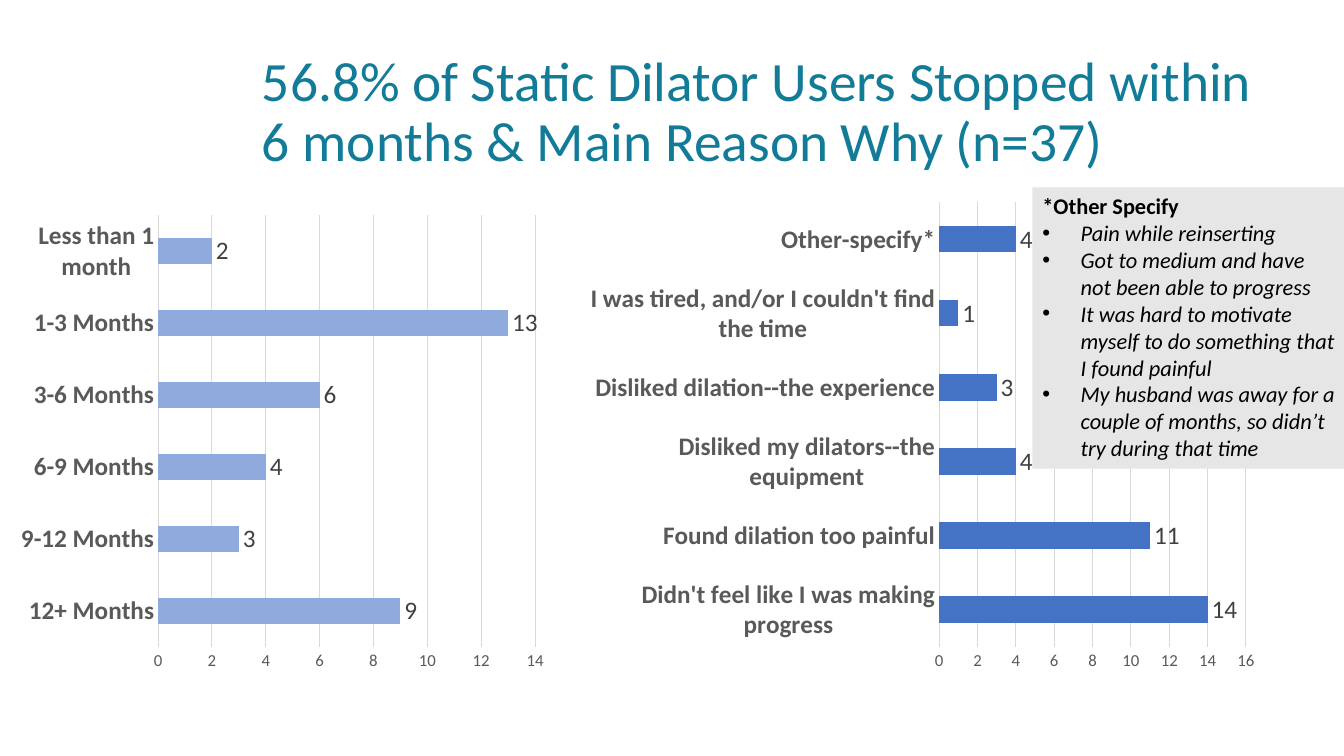
from pptx import Presentation
from pptx.chart.data import CategoryChartData
from pptx.dml.color import RGBColor
from pptx.enum.chart import XL_CHART_TYPE, XL_LABEL_POSITION, XL_TICK_MARK
from pptx.enum.shapes import MSO_SHAPE
from pptx.enum.text import MSO_ANCHOR, PP_ALIGN
from pptx.oxml.xmlchemy import OxmlElement
from pptx.util import Inches, Pt

FONT = "Calibri"
TEAL = RGBColor(0x11, 0x7B, 0x98)
LIGHT_BLUE = RGBColor(0x8F, 0xAA, 0xDC)
BLUE = RGBColor(0x44, 0x72, 0xC4)
PANEL_GRAY = RGBColor(0xE7, 0xE6, 0xE6)
GRID_GRAY = RGBColor(0xD9, 0xD9, 0xD9)
AXIS_GRAY = RGBColor(0x59, 0x59, 0x59)
LABEL_GRAY = RGBColor(0x40, 0x40, 0x40)
BLACK = RGBColor(0, 0, 0)

STOP_TIMES = {
    "12+ Months": 9,
    "9-12 Months": 3,
    "6-9 Months": 4,
    "3-6 Months": 6,
    "1-3 Months": 13,
    "Less than 1 month": 2,
}
STOP_REASONS = {
    "Didn't feel like I was making progress": 14,
    "Found dilation too painful": 11,
    "Disliked my dilators--the equipment": 4,
    "Disliked dilation--the experience": 3,
    "I was tired, and/or I couldn't find the time": 1,
    "Other-specify*": 4,
}
OTHER_REASONS = [
    "Pain while reinserting",
    "Got to medium and have not been able to progress",
    "It was hard to motivate myself to do something that I found painful",
    "My husband was away for a couple of months, so didn’t try during that time",
]


def format_font(font, size, color, bold=False, italic=False):
    font.name = FONT
    font.size = Pt(size)
    font.color.rgb = color
    font.bold = bold
    font.italic = italic


def add_bullet(paragraph, indent):
    properties = paragraph._p.get_or_add_pPr()
    properties.set("marL", str(Inches(indent)))
    properties.set("indent", str(-Inches(indent)))
    bullet_font = OxmlElement("a:buFont")
    bullet_font.set("typeface", "Arial")
    bullet = OxmlElement("a:buChar")
    bullet.set("char", "•")
    properties.extend([bullet_font, bullet])


def write_text(paragraph, text, size=16, color=BLACK, bold=False,
               italic=False, bulleted=False, line_spacing=None):
    paragraph.alignment = PP_ALIGN.LEFT
    if line_spacing:
        paragraph.line_spacing = line_spacing
    if bulleted:
        add_bullet(paragraph, 0.38)
    run = paragraph.add_run()
    run.text = text
    format_font(run.font, size, color, bold, italic)


def add_title(slide, text):
    box = slide.shapes.add_textbox(Inches(2.5), Inches(0.4), Inches(10.08), Inches(1.45))
    frame = box.text_frame
    frame.word_wrap = True
    frame.vertical_anchor = MSO_ANCHOR.MIDDLE
    write_text(frame.paragraphs[0], text, size=39.6, color=TEAL, line_spacing=0.9)


def add_bar_chart(slide, left, top, width, height, counts, color, maximum):
    data = CategoryChartData()
    data.categories = list(counts)
    data.add_series("Series 1", list(counts.values()))
    chart = slide.shapes.add_chart(
        XL_CHART_TYPE.BAR_CLUSTERED, Inches(left), Inches(top),
        Inches(width), Inches(height), data).chart
    chart.has_legend = False
    chart.has_title = False
    format_font(chart.font, 10, BLACK)

    # Bars and their values
    plot = chart.plots[0]
    plot.gap_width = 182
    plot.vary_by_categories = False
    fill = plot.series[0].format.fill
    fill.solid()
    fill.fore_color.rgb = color
    plot.has_data_labels = True
    labels = plot.data_labels
    labels.show_value = True
    labels.position = XL_LABEL_POSITION.OUTSIDE_END
    format_font(labels.font, 18, LABEL_GRAY)

    # Axes
    category_axis, value_axis = chart.category_axis, chart.value_axis
    for axis in (category_axis, value_axis):
        axis.major_tick_mark = XL_TICK_MARK.NONE
        axis.minor_tick_mark = XL_TICK_MARK.NONE
    format_font(category_axis.tick_labels.font, 18, AXIS_GRAY, bold=True)
    format_font(value_axis.tick_labels.font, 12, AXIS_GRAY)
    value_axis.minimum_scale = 0
    value_axis.maximum_scale = maximum
    value_axis.major_unit = 2
    value_axis.has_major_gridlines = True
    value_axis.format.line.fill.background()
    for line in (category_axis.format.line, value_axis.major_gridlines.format.line):
        line.color.rgb = GRID_GRAY
        line.width = Pt(0.75)


def add_note_panel(slide, heading, items):
    panel = slide.shapes.add_shape(
        MSO_SHAPE.RECTANGLE, Inches(10.24), Inches(1.86), Inches(3.1), Inches(2.79))
    panel.shadow.inherit = False
    panel.fill.solid()
    panel.fill.fore_color.rgb = PANEL_GRAY
    panel.line.fill.background()
    frame = panel.text_frame
    frame.word_wrap = True
    frame.vertical_anchor = MSO_ANCHOR.TOP
    write_text(frame.paragraphs[0], heading, bold=True)
    for item in items:
        write_text(frame.add_paragraph(), item, italic=True, bulleted=True)


def main():
    presentation = Presentation()
    presentation.slide_width = Inches(13.33)
    presentation.slide_height = Inches(7.5)
    slide = presentation.slides.add_slide(presentation.slide_layouts[6])

    add_title(slide, "56.8% of Static Dilator Users Stopped within "
                     "6 months & Main Reason Why (n=37)")
    add_bar_chart(slide, 0.1, 2.04, 5.4, 4.71, STOP_TIMES, LIGHT_BLUE, maximum=14)
    add_bar_chart(slide, 5.72, 1.91, 6.86, 4.84, STOP_REASONS, BLUE, maximum=16)
    add_note_panel(slide, "*Other Specify", OTHER_REASONS)

    presentation.save("out.pptx")


if __name__ == "__main__":
    main()
